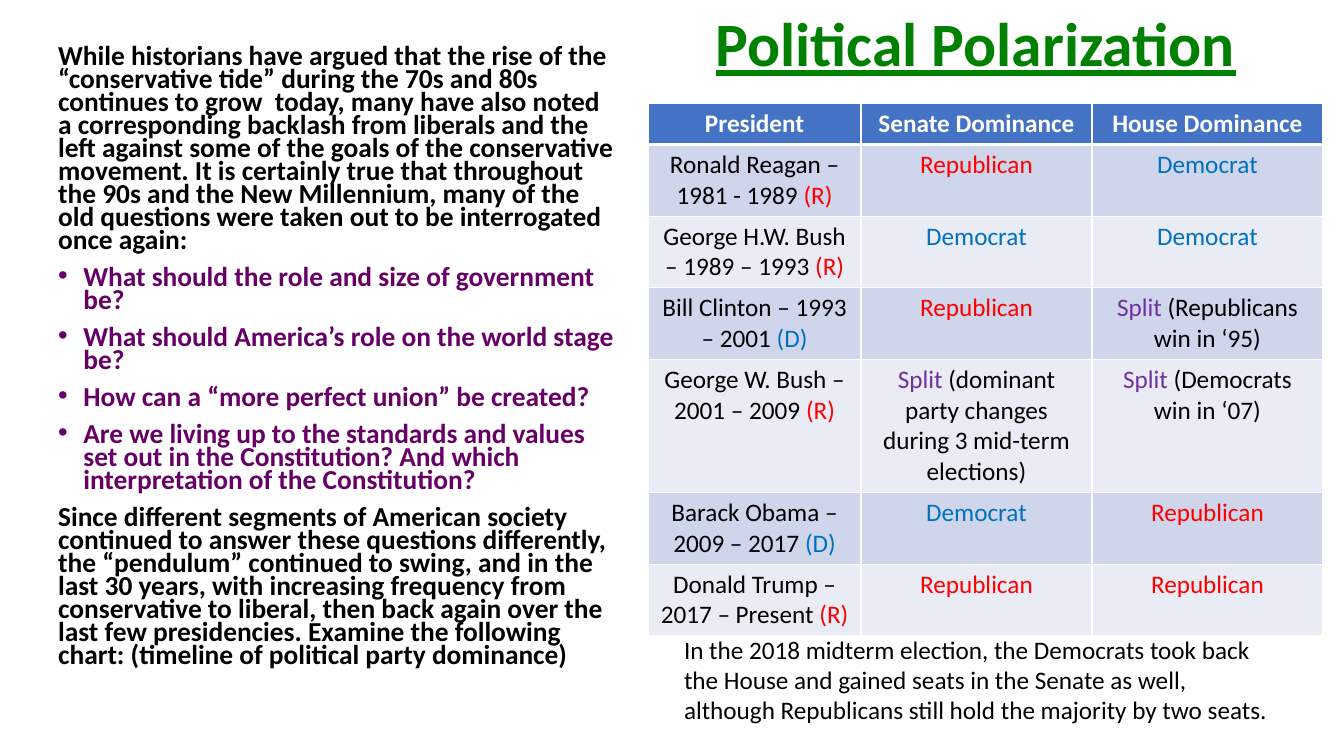
from dataclasses import dataclass

from lxml.etree import SubElement as Sub
from pptx import Presentation as Deck
from pptx.dml.color import RGBColor as Color
from pptx.enum.text import MSO_AUTO_SIZE as Fit, PP_ALIGN as Align
from pptx.oxml.ns import qn
from pptx.util import Pt


@dataclass(frozen=True)
class Theme:
    font: str = "Calibri"
    black: str = "000000"
    white: str = "FFFFFF"
    green: str = "008000"
    plum: str = "660066"
    red: str = "FF0000"
    blue: str = "0070C0"
    violet: str = "7030A0"
    head: str = "4472C4"
    bands: tuple[str, str] = ("CFD5EA", "E9EBF5")
    title: float = 44
    body: float = 19.6
    small: float = 18


LOOK = Theme()


@dataclass(frozen=True)
class Bit:
    """One run of text."""
    text: str
    hue: str = LOOK.black
    size: float = LOOK.small
    bold: bool = False
    line: bool = False


@dataclass(frozen=True)
class Para:
    bits: tuple[Bit, ...]
    align: Align = Align.LEFT
    bullet: bool = False
    gap: float = 0
    lead: float = 1


@dataclass(frozen=True)
class Box:
    left: float
    top: float
    width: float
    height: float
    paras: tuple[Para, ...]


@dataclass(frozen=True)
class Term:
    """One row of the table: a president and who held each chamber."""
    name: str
    party: str
    senate: tuple[Bit, ...]
    house: tuple[Bit, ...]


def point(text: str, bullet: bool = False, gap: float = 10) -> Para:
    hue = LOOK.plum if bullet else LOOK.black
    return Para((Bit(text, hue, LOOK.body, True),), bullet=bullet, gap=gap, lead=0.7)


def split(note: str) -> tuple[Bit, ...]:
    return Bit("Split", LOOK.violet), Bit(f" ({note})")


REP = (Bit("Republican", LOOK.red),)
DEM = (Bit("Democrat", LOOK.blue),)
HUES = {"R": LOOK.red, "D": LOOK.blue}

BOXES = (
    # Left column of text
    Box(34.5, 30, 415, 510, (
        point("While historians have argued that the rise of the “conservative tide” during "
              "the 70s and 80s continues to grow  today, many have also noted a corresponding "
              "backlash from liberals and the left against some of the goals of the "
              "conservative movement. It is certainly true that throughout the 90s and the "
              "New Millennium, many of the old questions were taken out to be interrogated "
              "once again:", gap=0),
        point("What should the role and size of government be?", True),
        point("What should America’s role on the world stage be?", True),
        point("How can a “more perfect union” be created?", True),
        point("Are we living up to the standards and values set out in the Constitution? "
              "And which interpretation of the Constitution?", True),
        point("Since different segments of American society continued to answer these "
              "questions differently, the “pendulum” continued to swing, and in the last 30 "
              "years, with increasing frequency from conservative to liberal, then back again "
              "over the last few presidencies. Examine the following chart: (timeline of "
              "political party dominance)"),
    )),
    # Title
    Box(463, 0, 468, 60.5, (
        Para((Bit("Political Polarization", LOOK.green, LOOK.title, True, True),),
             Align.CENTER),
    )),
    # Note under the table
    Box(481.5, 449.5, 435.5, 72.5, (
        Para((Bit("In the 2018 midterm election, the Democrats took back the House and gained "
                  "seats in the Senate as well, although Republicans still hold the majority "
                  "by two seats."),)),
    )),
)

HEADS = ("President", "Senate Dominance", "House Dominance")
TERMS = (
    Term("Ronald Reagan – 1981 - 1989", "R", REP, DEM),
    Term("George H.W. Bush – 1989 – 1993", "R", DEM, DEM),
    Term("Bill Clinton – 1993 – 2001", "D", REP, split("Republicans win in ‘95")),
    Term("George W. Bush – 2001 – 2009", "R",
         split("dominant party changes during 3 mid-term elections"),
         split("Democrats win in ‘07")),
    Term("Barack Obama – 2009 – 2017", "D", DEM, REP),
    Term("Donald Trump – 2017 – Present", "R", REP, REP),
)
WIDTHS = (152, 165, 165)
HEIGHTS = (29, 51, 51, 51, 95, 51, 51)


def write(frame, paras: tuple[Para, ...]) -> None:
    for i, para in enumerate(paras):
        p = frame.paragraphs[0] if i == 0 else frame.add_paragraph()
        p.alignment = para.align
        p.line_spacing = para.lead
        p.space_before = Pt(para.gap)
        if para.bullet:
            props = p._p.get_or_add_pPr()
            props.set("marL", str(Pt(18)))
            props.set("indent", str(-Pt(18)))
            Sub(props, qn("a:buFont"), typeface="Arial")
            Sub(props, qn("a:buChar"), char="•")
        for bit in para.bits:
            run = p.add_run()
            run.text = bit.text
            font = run.font
            font.name, font.size = LOOK.font, Pt(bit.size)
            font.bold, font.underline = bit.bold, bit.line
            font.color.rgb = Color.from_string(bit.hue)


def draw_box(slide, box: Box) -> None:
    shape = slide.shapes.add_textbox(Pt(box.left), Pt(box.top), Pt(box.width), Pt(box.height))
    frame = shape.text_frame
    frame.word_wrap = True
    frame.auto_size = Fit.NONE
    write(frame, box.paras)


def edge(cell, side: str, width: float) -> None:
    line = Sub(cell._tc.get_or_add_tcPr(), qn(f"a:ln{side}"), w=str(Pt(width)))
    Sub(Sub(line, qn("a:solidFill")), qn("a:srgbClr"), val=LOOK.white)


def draw_table(slide) -> None:
    rows = [tuple((Bit(head, LOOK.white, bold=True),) for head in HEADS)]
    for term in TERMS:
        name = (Bit(f"{term.name} "), Bit(f"({term.party})", HUES[term.party]))
        rows.append((name, term.senate, term.house))

    table = slide.shapes.add_table(len(rows), len(HEADS), Pt(463), Pt(74),
                                   Pt(sum(WIDTHS)), Pt(sum(HEIGHTS))).table
    for col, width in zip(table.columns, WIDTHS):
        col.width = Pt(width)
    for r, row in enumerate(rows):
        table.rows[r].height = Pt(HEIGHTS[r])
        for c, bits in enumerate(row):
            cell = table.cell(r, c)
            # Borders come before the fill in a cell
            for side in ("L", "R", "T", "B") if r == 0 else ("L", "R", "B"):
                edge(cell, side, 3 if r == 0 and side == "B" else 1)
            cell.fill.solid()
            hue = LOOK.bands[(r - 1) % 2] if r else LOOK.head
            cell.fill.fore_color.rgb = Color.from_string(hue)
            write(cell.text_frame, (Para(bits, Align.CENTER),))


def main() -> None:
    deck = Deck()
    deck.slide_width, deck.slide_height = Pt(960), Pt(540)
    slide = deck.slides.add_slide(deck.slide_layouts[6])
    body, *rest = BOXES
    draw_box(slide, body)
    draw_table(slide)
    for box in rest:
        draw_box(slide, box)
    deck.save("out.pptx")


if __name__ == "__main__":
    main()
